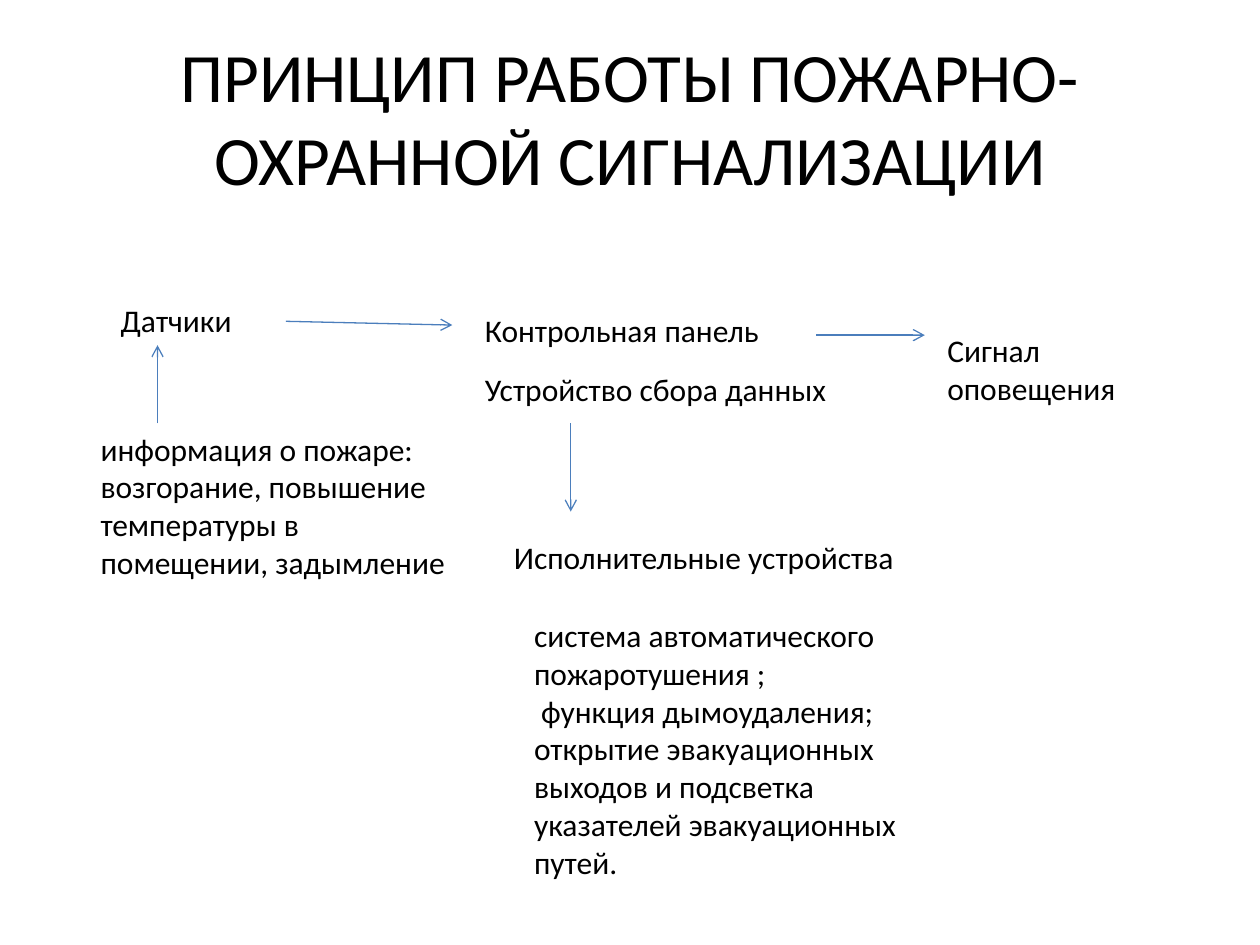
import pptx
import pptx.util
import pptx.dml.color
import pptx.enum.shapes
import pptx.enum.text
import pptx.oxml
import pptx.oxml.ns
from pptx.util import Inches

BLACK = pptx.dml.color.RGBColor(0x00, 0x00, 0x00)
ARROW_BLUE = pptx.dml.color.RGBColor(0x4B, 0x7E, 0xBC)
ALIGN = pptx.enum.text.PP_ALIGN


class SchemeSlide:
    font_name = "Calibri"
    title_size = 39.6
    label_size = 18
    arrow_width = 0.75

    def __init__(self, presentation):
        self.slide = presentation.slides.add_slide(presentation.slide_layouts[5])

    def fill_text(self, frame, lines, size, align):
        frame.word_wrap = True
        frame.text = "\n".join(lines)
        for paragraph in frame.paragraphs:
            paragraph.alignment = align
            for run in paragraph.runs:
                run.font.name = self.font_name
                run.font.size = pptx.util.Pt(size)
                run.font.color.rgb = BLACK

    def title(self, text, left, top, width, height):
        heading = self.slide.shapes.title
        heading.left, heading.top = Inches(left), Inches(top)
        heading.width, heading.height = Inches(width), Inches(height)
        self.fill_text(heading.text_frame, [text], self.title_size, ALIGN.CENTER)
        heading.text_frame.vertical_anchor = pptx.enum.text.MSO_ANCHOR.MIDDLE
        heading.text_frame.auto_size = pptx.enum.text.MSO_AUTO_SIZE.NONE

    def label(self, lines, left, top, width, height):
        box = self.slide.shapes.add_textbox(
            Inches(left), Inches(top), Inches(width), Inches(height))
        self.fill_text(box.text_frame, lines, self.label_size, ALIGN.LEFT)
        box.text_frame.auto_size = pptx.enum.text.MSO_AUTO_SIZE.SHAPE_TO_FIT_TEXT

    def arrow(self, start_x, start_y, end_x, end_y):
        link = self.slide.shapes.add_connector(
            pptx.enum.shapes.MSO_CONNECTOR.STRAIGHT,
            Inches(start_x), Inches(start_y), Inches(end_x), Inches(end_y))
        link.line.color.rgb = ARROW_BLUE
        link.line.width = pptx.util.Pt(self.arrow_width)
        namespace = pptx.oxml.ns.nsdecls("a")
        properties = link.element.spPr
        properties.find(pptx.oxml.ns.qn("a:ln")).append(
            pptx.oxml.parse_xml(f'<a:tailEnd {namespace} type="arrow"/>'))
        properties.append(pptx.oxml.parse_xml(f"<a:effectLst {namespace}/>"))


def main():
    presentation = pptx.Presentation()
    presentation.slide_width = Inches(10)
    presentation.slide_height = Inches(7.5)

    scheme = SchemeSlide(presentation)
    scheme.title("ПРИНЦИП РАБОТЫ ПОЖАРНО-ОХРАННОЙ СИГНАЛИЗАЦИИ", 0.5, 0.3, 9, 1.25)

    stages = [
        (["Датчики"], 0.86, 2.34, 1.41, 0.4),
        (["Контрольная панель"], 3.75, 2.42, 2.58, 0.4),
        (["Сигнал оповещения"], 7.42, 2.58, 1.8, 0.71),
        (["Исполнительные устройства"], 3.98, 4.22, 3.44, 0.4),
        (["система автоматического пожаротушения ;",
          " функция дымоудаления;",
          "открытие эвакуационных выходов и подсветка указателей "
          "эвакуационных путей."], 4.14, 4.84, 3.28, 2.22),
        (["информация о пожаре: возгорание, повышение температуры "
          "в помещении, задымление"], 0.7, 3.36, 3.13, 1.31),
        (["Устройство сбора данных"], 3.75, 2.89, 3.52, 0.4),
    ]
    for stage in stages:
        scheme.label(*stage)

    signal_routes = [
        (2.27, 2.55, 3.59, 2.58),
        (6.48, 2.66, 7.34, 2.66),
        (4.53, 3.36, 4.53, 4.06),
        (1.25, 3.36, 1.25, 2.74),
    ]
    for signal_route in signal_routes:
        scheme.arrow(*signal_route)

    presentation.save("out.pptx")


if __name__ == "__main__":
    main()
